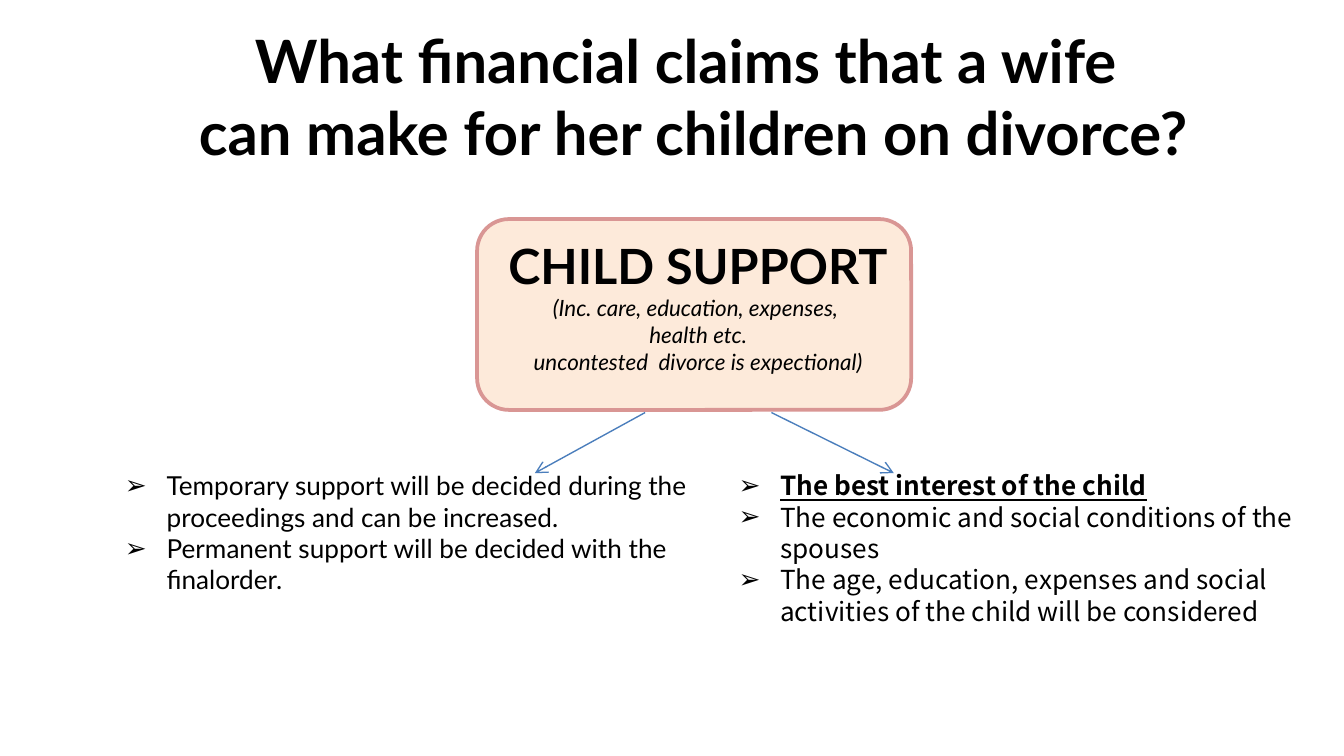
from pptx import Presentation
from pptx import util as u
from pptx.dml.color import RGBColor
from pptx.enum import shapes, text
from pptx.oxml.ns import qn
from lxml import etree

PX = 4572  # EMU in one px, 200 px to the inch
theme = dict(ink="000000", fill="FDEADA", edge="D99694", arrow="4B7EBC",
             font="Lato", alt="Noto Sans CJK KR",
             title=32, head=26, note=12, body=14)


def box(*nums):
    return [u.Emu(n * PX) for n in nums]


def write(frame, words, size, first=False, font=theme["font"], bold=False,
          italic=False, line=False, align=text.PP_ALIGN.LEFT, lead=None, bullet=None):
    para = frame.paragraphs[0] if first else frame.add_paragraph()
    para.alignment = align
    para.space_before = u.Pt(0)
    if lead:
        para.line_spacing = u.Pt(lead)
    if bullet:
        props = para._p.get_or_add_pPr()
        props.set("marL", str(62 * PX))
        props.set("indent", str(-62 * PX))
        etree.SubElement(props, qn("a:buChar")).set("char", bullet)
    for i, part in enumerate(words.split("\n")):
        if i:
            para.add_line_break()
        run = para.add_run()
        run.text = part
        run.font.name, run.font.size = font, u.Pt(size)
        run.font.bold, run.font.italic, run.font.underline = bold, italic, line
        run.font.color.rgb = RGBColor.from_string(theme["ink"])


deck = Presentation()
deck.slide_width, deck.slide_height = box(2000, 1125)
slide = deck.slides.add_slide(deck.slide_layouts[3])
title, left, right = slide.placeholders
mid = text.PP_ALIGN.CENTER

# Placeholders: title and two lists
for holder, place, anchor in (
        (title, (150, 5, 1764, 274), text.MSO_ANCHOR.MIDDLE),
        (left, (166, 689, 930, 316), text.MSO_ANCHOR.TOP),
        (right, (1079, 689, 921, 256), text.MSO_ANCHOR.TOP)):
    holder.left, holder.top, holder.width, holder.height = box(*place)
    holder.text_frame.auto_size = text.MSO_AUTO_SIZE.NONE
    holder.text_frame.vertical_anchor = anchor

write(title.text_frame,
      "What financial claims that a wife \ncan make for her children on divorce?",
      theme["title"], first=True, bold=True, align=mid)

# Child support card
card = slide.shapes.add_shape(shapes.MSO_SHAPE.ROUNDED_RECTANGLE,
                              *box(710, 326, 646, 284))
card.shadow.inherit = False
card.fill.solid()
card.fill.fore_color.rgb = RGBColor.from_string(theme["fill"])
card.line.color.rgb = RGBColor.from_string(theme["edge"])
card.line.width = u.Pt(2)

label = slide.shapes.add_textbox(*box(700, 342, 678, 236)).text_frame
label.word_wrap = True
write(label, "CHILD SUPPORT", theme["head"], first=True, bold=True, align=mid)
for note in ("(Inc. care, education, expenses, ", "health etc.",
             "uncontested  divorce is expectional)"):
    write(label, note, theme["note"], italic=True, align=mid)

# Arrows from the card to the lists
for start, end in ((1148, 1330), (960, 796)):
    arrow = slide.shapes.add_connector(shapes.MSO_CONNECTOR.STRAIGHT,
                                       *box(start, 614, end, 704))
    arrow.line.color.rgb = RGBColor.from_string(theme["arrow"])
    arrow.line.width = u.Pt(0.75)
    etree.SubElement(arrow.line._get_or_add_ln(), qn("a:tailEnd")).set("type", "arrow")
    etree.SubElement(arrow._element.spPr, qn("a:effectLst"))

# Left list: kinds of support
for i, item in enumerate((
        "Temporary support will be decided during the proceedings and can be increased.",
        "Permanent support will be decided with the finalorder.")):
    write(left.text_frame, item, theme["body"], first=i == 0, bullet="➢")

# Right list: what is weighed, the first point stressed
for i, item in enumerate((
        "The best interest of the child",
        "The economic and social conditions of the spouses",
        "The age, education, expenses and social activities of the child will be considered")):
    write(right.text_frame, item, theme["body"], first=i == 0, bullet="➢",
          font=theme["alt"], bold=i == 0, line=i == 0, lead=16.8)

deck.save("out.pptx")
